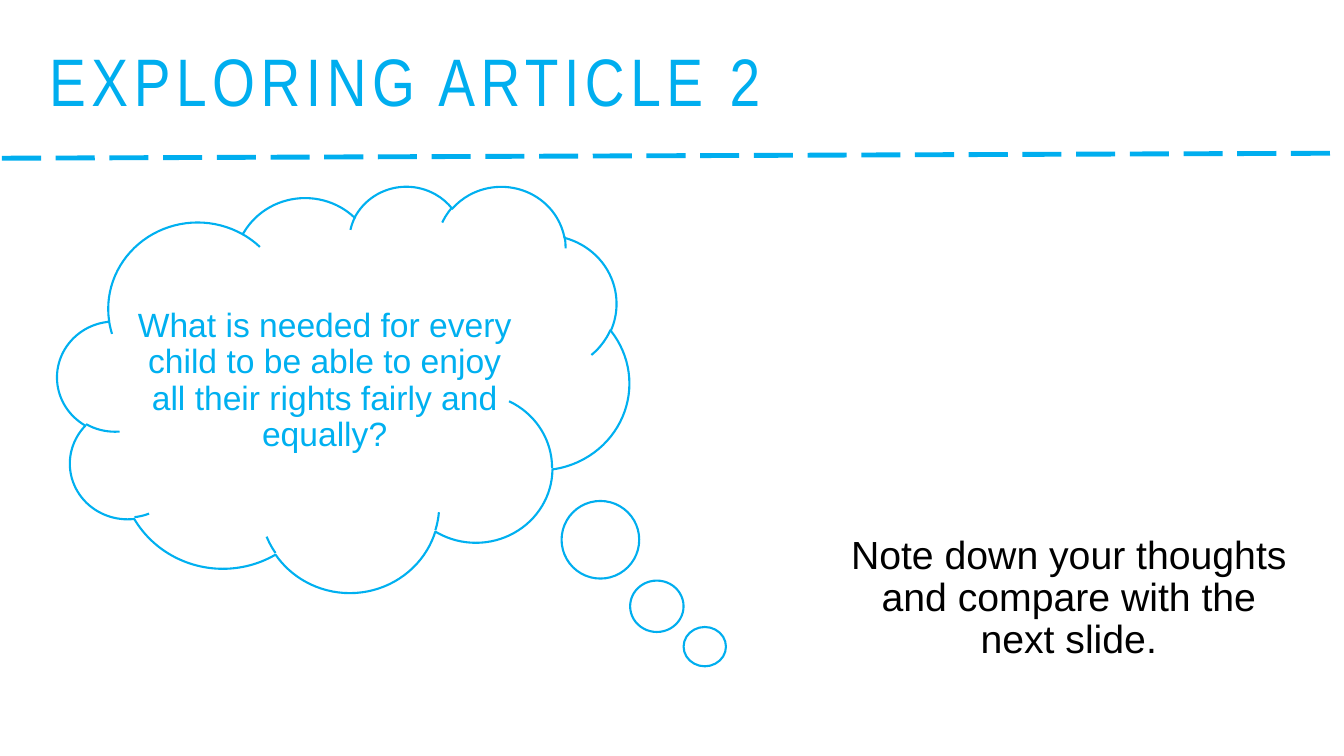
"""Build the slide that asks what children need to enjoy Article 2 rights."""
from dataclasses import dataclass

from lxml import etree
from pptx import Presentation
from pptx import util as u
from pptx.dml.color import RGBColor
from pptx.enum import dml, shapes, text
from pptx.oxml.ns import qn

PX = 9144
COLOURS = {"heading": "00AEEF", "thought": "00B0F0", "note": "000000"}


@dataclass(frozen=True)
class Bubble:
    preset: shapes.MSO_SHAPE
    left: int
    top: int
    width: int
    height: int
    colour: str = "heading"


@dataclass(frozen=True)
class Passage:
    wording: str
    left: int
    top: int
    width: int
    height: int
    size: int
    colour: str
    font: str = "Arial"
    align: text.PP_ALIGN = text.PP_ALIGN.CENTER
    anchor: text.MSO_ANCHOR = text.MSO_ANCHOR.TOP
    inset_top: int = 20
    tracking: int = 0


BUBBLES = (
    Bubble(shapes.MSO_SHAPE.CLOUD, 57, 184, 567, 403, "thought"),
    Bubble(shapes.MSO_SHAPE.OVAL, 557, 497, 77, 77),
    Bubble(shapes.MSO_SHAPE.OVAL, 625, 576, 53, 51),
    Bubble(shapes.MSO_SHAPE.OVAL, 678, 622, 42, 39),
)
PASSAGES = (
    Passage("Note down your thoughts and compare with the next slide.",
            830, 511, 460, 152, 28, "note"),
    Passage("What is needed for every child to be able to enjoy all their "
            "rights fairly and equally?", 125, 286, 394, 268, 24, "thought"),
    Passage("EXPLORING ARTICLE 2", 39, 29, 1230, 96, 48, "heading",
            "Arial Narrow", text.PP_ALIGN.LEFT, text.MSO_ANCHOR.BOTTOM, 5, 400),
)


def px(*lengths: int) -> list[u.Emu]:
    return [u.Emu(length * PX) for length in lengths]


def rgb(name: str) -> RGBColor:
    return RGBColor.from_string(COLOURS[name])


def draw_divider(slide) -> None:
    divider = slide.shapes.add_connector(
        shapes.MSO_CONNECTOR.STRAIGHT, *px(2, 157, 1333, 152))
    divider.line.color.rgb = rgb("heading")
    divider.line.width = u.Pt(3.5)
    divider.line.dash_style = dml.MSO_LINE.LONG_DASH
    etree.SubElement(divider.line._get_or_add_ln().getparent(), qn("a:effectLst"))


def draw_bubble(slide, bubble: Bubble) -> None:
    outline = slide.shapes.add_shape(
        bubble.preset, *px(bubble.left, bubble.top, bubble.width, bubble.height))
    outline.shadow.inherit = False
    outline.fill.background()
    outline.line.color.rgb = rgb(bubble.colour)
    outline.line.width = u.Pt(1.5)


def draw_passage(slide, passage: Passage) -> None:
    frame = slide.shapes.add_textbox(
        *px(passage.left, passage.top, passage.width, passage.height)).text_frame
    frame.word_wrap = True
    frame.vertical_anchor = passage.anchor
    frame.margin_left, frame.margin_right, frame.margin_top, frame.margin_bottom = px(
        10, 10, passage.inset_top, 5)
    paragraph = frame.paragraphs[0]
    paragraph.alignment = passage.align
    paragraph.line_spacing = 0.9
    wording = paragraph.add_run()
    wording.text = passage.wording
    paragraph.font.name = passage.font
    paragraph.font.size = u.Pt(passage.size)
    paragraph.font.color.rgb = rgb(passage.colour)
    if passage.tracking:
        wording._r.get_or_add_rPr().set("spc", str(passage.tracking))


def main() -> None:
    deck = Presentation()
    deck.slide_width, deck.slide_height = px(1333, 750)
    slide = deck.slides.add_slide(deck.slide_layouts[6])
    draw_divider(slide)
    for bubble in BUBBLES:
        draw_bubble(slide, bubble)
    for passage in PASSAGES:
        draw_passage(slide, passage)
    deck.save("out.pptx")


if __name__ == "__main__":
    main()
